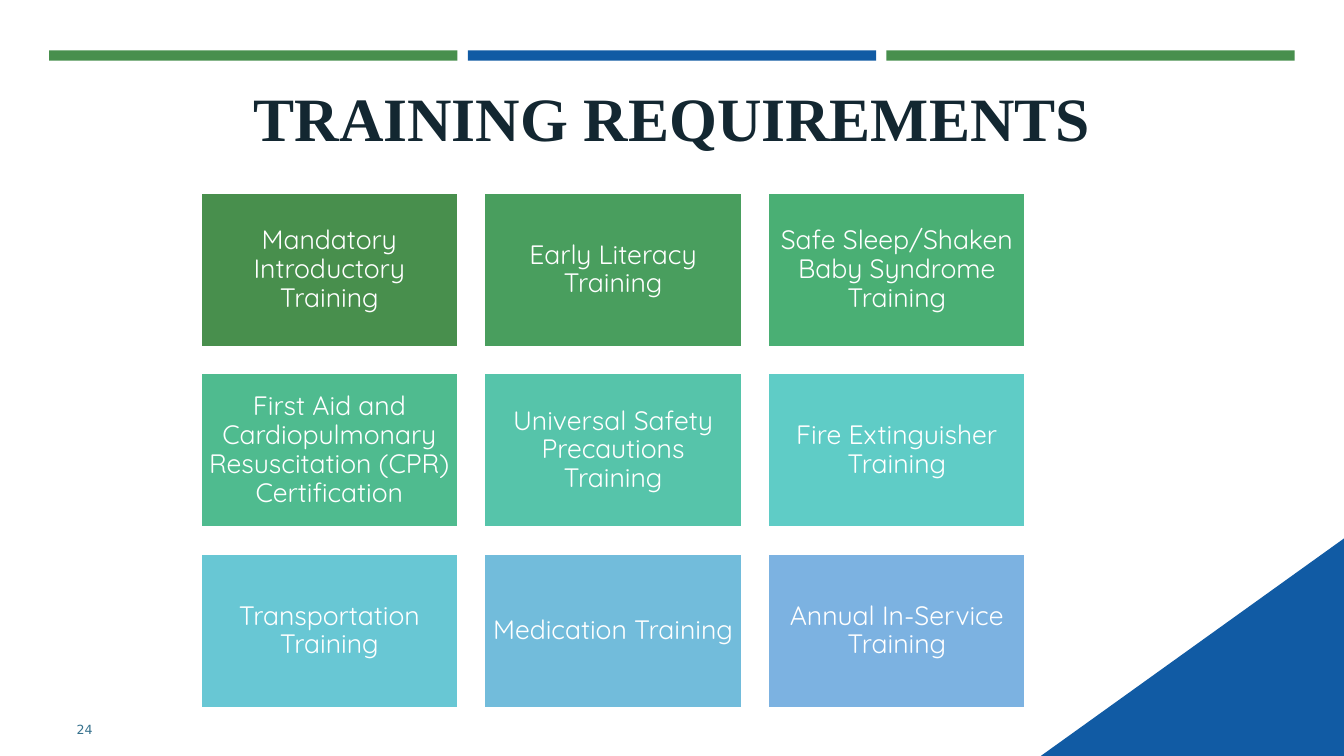
import pptx
import pptx.util
import pptx.dml.color
import pptx.enum.shapes
import pptx.enum.text

Cm = pptx.util.Cm
Pt = pptx.util.Pt
ALIGN = pptx.enum.text.PP_ALIGN
MIDDLE = pptx.enum.text.MSO_ANCHOR.MIDDLE
RECT = pptx.enum.shapes.MSO_SHAPE.RECTANGLE

WIDTH, HEIGHT = 33.87, 19.05
COLORS = {
    "green": "488F4D", "blue": "115BA4", "ink": "132731",
    "page": "36718D", "white": "FFFFFF",
}
TILES = [
    ("Mandatory Introductory Training", "488F4D"),
    ("Early Literacy Training", "499E5E"),
    ("Safe Sleep/Shaken Baby Syndrome Training", "4AAF74"),
    ("First Aid and Cardiopulmonary Resuscitation (CPR) Certification",
     "4FBB8F"),
    ("Universal Safety Precautions Training", "56C4AA"),
    ("Fire Extinguisher Training", "5FCCC6"),
    ("Transportation Training", "68C7D4"),
    ("Medication Training", "72BCDB"),
    ("Annual In-Service Training", "7CB2E1"),
]


def rgb(code):
    return pptx.dml.color.RGBColor.from_string(code)


def paint(shape, fill, line=None):
    shape.shadow.inherit = False
    shape.fill.solid()
    shape.fill.fore_color.rgb = rgb(fill)
    if line:
        shape.line.color.rgb = rgb(line)
        shape.line.width = Pt(2)
    else:
        shape.line.fill.background()


def add_rect(slide, left, top, width, height, fill, line=None):
    rect = slide.shapes.add_shape(
        RECT, Cm(left), Cm(top), Cm(width), Cm(height))
    paint(rect, fill, line)
    return rect


def write(shape, text, size, face, color, align, bold=False):
    """Set one wrapped, vertically centred paragraph and return it."""
    frame = shape.text_frame
    frame.word_wrap = True
    frame.vertical_anchor = MIDDLE
    para = frame.paragraphs[0]
    para.text = text
    para.alignment = align
    font = para.font
    font.size, font.name, font.bold = Pt(size), face, bold
    font.color.rgb = rgb(color)
    return para


def add_label(slide, left, top, width, height, *style):
    box = slide.shapes.add_textbox(
        Cm(left), Cm(top), Cm(width), Cm(height))
    write(box, *style)


def add_bars(slide, left, top, width, height, gap=0.26):
    hues = ["green", "blue", "green"]
    size = (width - gap * (len(hues) - 1)) / len(hues)
    for i, hue in enumerate(hues):
        add_rect(slide, left + i * (size + gap), top, size, height,
                 COLORS[hue])


def add_corner(slide, left, top, width, height):
    """Fill the lower right half of the box."""
    right, base = Cm(left + width), Cm(top + height)
    form = slide.shapes.build_freeform(Cm(left), base)
    form.add_line_segments([(right, Cm(top)), (right, base)], close=True)
    paint(form.convert_to_shape(), COLORS["blue"])


def add_grid(slide, left, top, width, height, cols=3, gap=0.65):
    rows = len(TILES) // cols
    wide = (width - gap * (cols - 1)) / cols
    high = (height - gap * (rows - 1)) / rows
    for i, (text, fill) in enumerate(TILES):
        row, col = divmod(i, cols)
        tile = add_rect(slide, left + col * (wide + gap),
                        top + row * (high + gap), wide, high,
                        fill, COLORS["white"])
        frame = tile.text_frame
        frame.margin_left = frame.margin_right = Cm(0.2)
        frame.margin_top = frame.margin_bottom = Cm(0.2)
        para = write(tile, text, 19, "Quicksand", COLORS["white"],
                     ALIGN.CENTER)
        para.line_spacing = 0.9


def main():
    deck = pptx.Presentation()
    deck.slide_width, deck.slide_height = Cm(WIDTH), Cm(HEIGHT)
    slide = deck.slides.add_slide(deck.slide_layouts[6])
    add_bars(slide, 1.24, 1.27, 31.39, 0.26)
    add_corner(slide, 26.23, 13.57, WIDTH - 26.23, HEIGHT - 13.57)
    add_label(slide, 1.63, 1.8, 30.63, 2.31, "TRAINING REQUIREMENTS",
              44, "Times New Roman", COLORS["ink"], ALIGN.CENTER, True)
    add_label(slide, 1.68, 17.86, 2.92, 1.02, "24",
              9, "DejaVu Sans", COLORS["page"], ALIGN.LEFT)
    add_grid(slide, 5.05, 4.85, 20.8, 13)
    deck.save("out.pptx")


if __name__ == "__main__":
    main()
